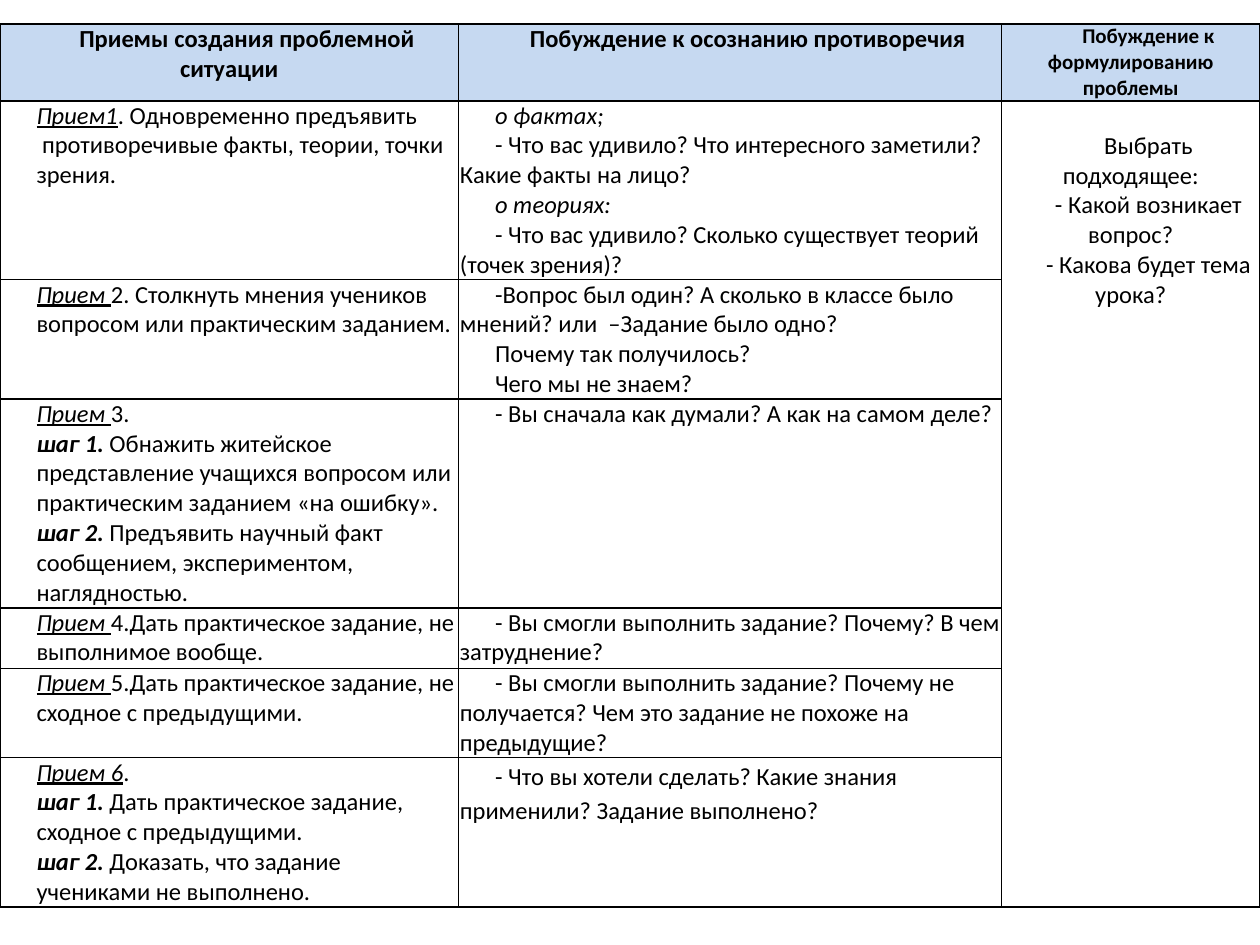
from lxml import etree
from pptx import Presentation
from pptx.dml.color import RGBColor
from pptx.enum.text import PP_ALIGN
from pptx.oxml.ns import qn
from pptx.util import Inches, Pt

FONT = "Calibri"
BLACK = "000000"
HEADER_FILL = "C6D9F1"
COLUMN_WIDTHS = [3.64, 4.31, 2.05]
ROW_HEIGHTS = [0.5, 1.12, 0.8, 1.44, 0.48, 0.6, 1.12]

# A cell is a list of paragraphs; a paragraph is a list of (text, style) runs.
# Style letters: b bold, i italic, u underlined.
HEADERS = [
    ("Приемы создания проблемной ситуации", 14),
    ("Побуждение к осознанию противоречия", 14),
    ("Побуждение к формулированию проблемы", 12),
]
TECHNIQUES = [
    [
        [("Прием1", "iu"), (". Одновременно предъявить", "")],
        [(" противоречивые факты, теории, точки", "")],
        [("зрения.", "")],
    ],
    [
        [("Прием ", "iu"), ("2. Столкнуть мнения учеников", "")],
        [("вопросом или практическим заданием.", "")],
    ],
    [
        [("Прием ", "iu"), ("3.", "")],
        [("шаг 1.", "bi"), (" Обнажить житейское", "")],
        [("представление учащихся вопросом или", "")],
        [("практическим заданием «на ошибку».", "")],
        [("шаг 2. ", "bi"), ("Предъявить научный факт", "")],
        [("сообщением, экспериментом,", "")],
        [("наглядностью.", "")],
    ],
    [
        [("Прием ", "iu"), ("4.Дать практическое задание, не", "")],
        [("выполнимое вообще.", "")],
    ],
    [
        [("Прием ", "iu"), ("5.Дать практическое задание, не", "")],
        [("сходное с предыдущими.", "")],
    ],
    [
        [("Прием 6", "iu"), (".", "")],
        [("шаг 1.", "bi"), (" Дать практическое задание,", "")],
        [("сходное с предыдущими.", "")],
        [("шаг 2.", "bi"), (" Доказать, что задание", "")],
        [("учениками не выполнено.", "")],
    ],
]
QUESTIONS = [
    [
        [("о фактах;", "i")],
        [("- Что вас удивило? Что интересного заметили? Какие факты на лицо?", "")],
        [("о теориях:", "i")],
        [("- Что вас удивило? Сколько существует теорий (точек зрения)?", "")],
    ],
    [
        [("-Вопрос был один? А сколько в классе было мнений? или  –Задание было одно?", "")],
        [("Почему так получилось?", "")],
        [("Чего мы не знаем?", "")],
    ],
    [[("- Вы сначала как думали? А как на самом деле?", "")]],
    [[("- Вы смогли выполнить задание? Почему? В чем затруднение?", "")]],
    [[("- Вы смогли выполнить задание? Почему не получается? "
       "Чем это задание не похоже на предыдущие?", "")]],
    [[("- Что вы хотели сделать? Какие знания применили? Задание выполнено?", "")]],
]
PROBLEM_PROMPTS = [
    [("Выбрать подходящее:", "")],
    [("- Какой возникает вопрос?", "")],
    [("- Какова будет тема урока?", "")],
]


def color(hex_value):
    return RGBColor.from_string(hex_value)


def format_cell(cell, fill=None):
    """Set margins, fill and a thin black border on every side."""
    cell.margin_left = cell.margin_right = Inches(0.01)
    cell.margin_top = cell.margin_bottom = 0
    properties = cell._tc.get_or_add_tcPr()
    for side in ("a:lnL", "a:lnR", "a:lnT", "a:lnB"):
        line = etree.SubElement(properties, qn(side), w=str(Pt(1)))
        solid = etree.SubElement(line, qn("a:solidFill"))
        etree.SubElement(solid, qn("a:srgbClr"), val=BLACK)
    if fill:
        cell.fill.solid()
        cell.fill.fore_color.rgb = color(fill)
    else:
        cell.fill.background()


def write_cell(cell, paragraphs, size=14, alignment=PP_ALIGN.LEFT, line_spacing=None):
    text_frame = cell.text_frame
    for index, runs in enumerate(paragraphs):
        paragraph = text_frame.add_paragraph() if index else text_frame.paragraphs[0]
        paragraph.alignment = alignment
        paragraph.line_spacing = line_spacing
        # First-line indent
        properties = paragraph._p.get_or_add_pPr()
        properties.set("marL", "0")
        properties.set("indent", str(Inches(0.28)))
        for text, style in runs:
            run = paragraph.add_run()
            run.text = text
            run.font.name = FONT
            run.font.size = Pt(size)
            run.font.color.rgb = color(BLACK)
            run.font.bold = "b" in style
            run.font.italic = "i" in style
            run.font.underline = "u" in style


def add_techniques_table(slide, left, top, width, height):
    frame = slide.shapes.add_table(
        len(ROW_HEIGHTS), len(COLUMN_WIDTHS), left, top, width, height)
    table = frame.table
    table.first_row = table.horz_banding = False
    for column, column_width in zip(table.columns, COLUMN_WIDTHS):
        column.width = Inches(column_width)
    for row_index, (row, row_height) in enumerate(zip(table.rows, ROW_HEIGHTS)):
        row.height = Inches(row_height)
        for cell in row.cells:
            format_cell(cell, None if row_index else HEADER_FILL)
    frame.height = height

    # Header row
    for column_index, (text, size) in enumerate(HEADERS):
        write_cell(table.cell(0, column_index), [[(text, "b")]], size, PP_ALIGN.CENTER)

    # Techniques and the questions that go with them
    last_row = len(ROW_HEIGHTS) - 1
    for row_index, (technique, questions) in enumerate(zip(TECHNIQUES, QUESTIONS), 1):
        write_cell(table.cell(row_index, 0), technique)
        write_cell(table.cell(row_index, 1), questions,
                   line_spacing=1.15 if row_index == last_row else None)

    # Prompts shared by all techniques, starting one line down
    prompts = table.cell(1, 2)
    prompts.merge(table.cell(last_row, 2))
    prompts.margin_top = Inches(0.24)
    write_cell(prompts, PROBLEM_PROMPTS, alignment=PP_ALIGN.CENTER)


def main():
    presentation = Presentation()
    presentation.slide_width = Inches(10)
    presentation.slide_height = Inches(7.5)
    slide = presentation.slides.add_slide(presentation.slide_layouts[6])
    add_techniques_table(slide, Inches(0), Inches(0.19), Inches(10), Inches(6.91))
    presentation.save("out.pptx")


if __name__ == "__main__":
    main()
